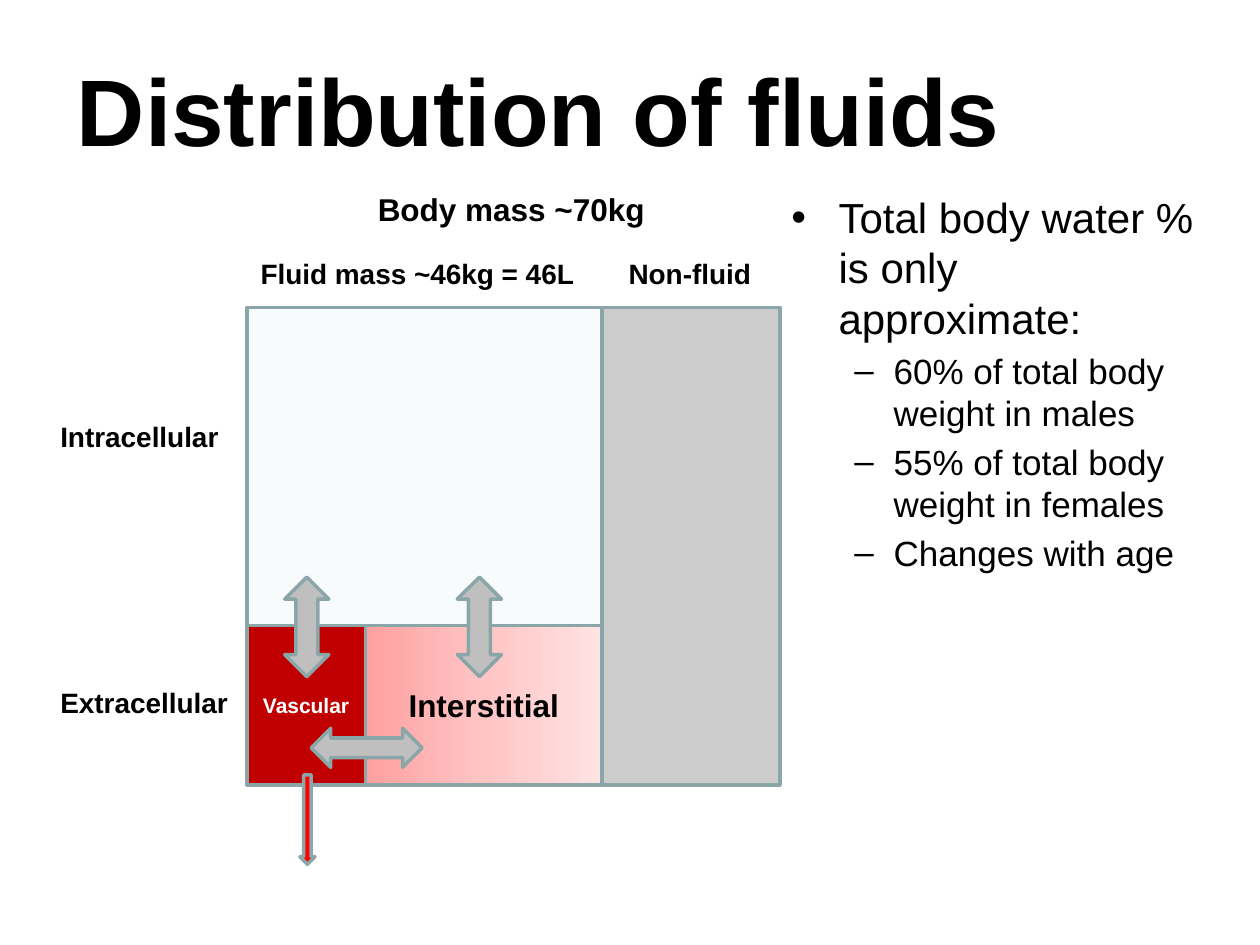
from copy import deepcopy

from pptx import Presentation
from pptx.dml.color import RGBColor
from pptx.enum.shapes import MSO_SHAPE as SHAPE
from pptx.enum.text import MSO_ANCHOR as ANCHOR, MSO_AUTO_SIZE as AUTO, PP_ALIGN as ALIGN
from pptx.util import Inches, Pt

BLACK = RGBColor(0x00, 0x00, 0x00)
WHITE = RGBColor(0xFF, 0xFF, 0xFF)
EDGE = RGBColor(0x8A, 0xA6, 0xA8)
PALE = RGBColor(0xF8, 0xFB, 0xFC)
GREY = RGBColor(0xCC, 0xCC, 0xCC)
ARROW = RGBColor(0xBF, 0xBF, 0xBF)
BLOOD = RGBColor(0xC0, 0x00, 0x00)
RED = RGBColor(0xFF, 0x00, 0x00)
PINKS = [RGBColor(0xFF, 0xA0, 0xA0), RGBColor(0xFF, 0xC5, 0xC5), RGBColor(0xFF, 0xE3, 0xE3)]

# Diagram grid: 9 columns (6 fluid, 3 non-fluid) by 3 rows (2 intra-, 1 extracellular)
LEFT, TOP, COL, ROW = 1.96, 2.44, 0.47, 1.263

prs = Presentation()
prs.slide_width, prs.slide_height = Inches(10), Inches(7.5)
s = prs.slides.add_slide(prs.slide_layouts[1])


def add_run(p, text, size, color=BLACK, bold=True):
    r = p.add_run()
    r.text = text
    r.font.name, r.font.size, r.font.bold = "Arial", Pt(size), bold
    r.font.color.rgb = color


def add_block(kind, x, y, w, h, color=None):
    sp = s.shapes.add_shape(kind, Inches(x), Inches(y), Inches(w), Inches(h))
    sp.shadow.inherit = False
    sp.line.color.rgb, sp.line.width = EDGE, Pt(2)
    if color is not None:
        sp.fill.solid()
        sp.fill.fore_color.rgb = color
    return sp


# Title
title = s.shapes.title
title.left, title.top, title.width, title.height = map(Inches, (0.51, 0.36, 7.61, 1.01))
tf = title.text_frame
tf.word_wrap, tf.auto_size = False, AUTO.NONE
p = tf.paragraphs[0]
p.alignment = ALIGN.LEFT
add_run(p, "Distribution of fluids", 54)

# Bullet list
body = s.placeholders[1]
body.left, body.top, body.width, body.height = map(Inches, (6.18, 1.47, 3.47, 4.49))
tf = body.text_frame
tf.auto_size = AUTO.NONE
bullets = [
    (0, "Total body water % is only approximate:"),
    (1, "60% of total body weight in males"),
    (1, "55% of total body weight in females"),
    (1, "Changes with age"),
]
for i, (level, text) in enumerate(bullets):
    p = tf.add_paragraph() if i else tf.paragraphs[0]
    p.level = level
    add_run(p, text, 20 if level else 24, bold=False)

# Compartments: column, row, columns wide, rows high, fill, label, size, label colour
compartments = [
    (6, 0, 3, 3, GREY, None, None, None),
    (0, 0, 6, 2, PALE, None, None, None),
    (2, 2, 4, 1, None, "Interstitial", 18, BLACK),
    (0, 2, 2, 1, BLOOD, "Vascular", 12, WHITE),
]
for col, row, cols, rows, color, label, size, ink in compartments:
    sp = add_block(SHAPE.RECTANGLE, LEFT + col * COL, TOP + row * ROW, cols * COL, rows * ROW, color)
    if color is None:
        sp.fill.gradient()
        sp.fill.gradient_angle = 0
        # The default gradient has two stops; add a middle one
        first = sp.fill.gradient_stops[0]._gs
        first.addnext(deepcopy(first))
        for i, (stop, pink) in enumerate(zip(sp.fill.gradient_stops, PINKS)):
            stop.position, stop.color.rgb = i / 2, pink
    if label:
        tf = sp.text_frame
        tf.vertical_anchor = ANCHOR.MIDDLE
        tf.paragraphs[0].alignment = ALIGN.CENTER
        add_run(tf.paragraphs[0], label, size, ink)

# Labels around the diagram
labels = [
    ("Body mass ~70kg", 2.9, 1.46, 2.34, 0.4, 18),
    ("Fluid mass ~46kg = 46L", 1.97, 1.99, 2.72, 0.37, 16),
    ("Non-fluid", 4.89, 1.99, 1.19, 0.37, 16),
    ("Intracellular", 0.38, 3.28, 1.48, 0.37, 16),
    ("Extracellular", 0.38, 5.39, 1.55, 0.37, 16),
]
for text, x, y, w, h, size in labels:
    tf = s.shapes.add_textbox(Inches(x), Inches(y), Inches(w), Inches(h)).text_frame
    tf.word_wrap, tf.auto_size = False, AUTO.SHAPE_TO_FIT_TEXT
    add_run(tf.paragraphs[0], text, size)

# Exchange between compartments, and loss from the vascular one
add_block(SHAPE.LEFT_RIGHT_ARROW, 2.47, 5.78, 0.88, 0.31, ARROW)
for x in (3.41, 2.04):
    add_block(SHAPE.LEFT_RIGHT_ARROW, x, 4.8, 0.79, 0.35, ARROW).rotation = 90
add_block(SHAPE.DOWN_ARROW, 2.38, 6.15, 0.12, 0.71, RED)

prs.save("out.pptx")
